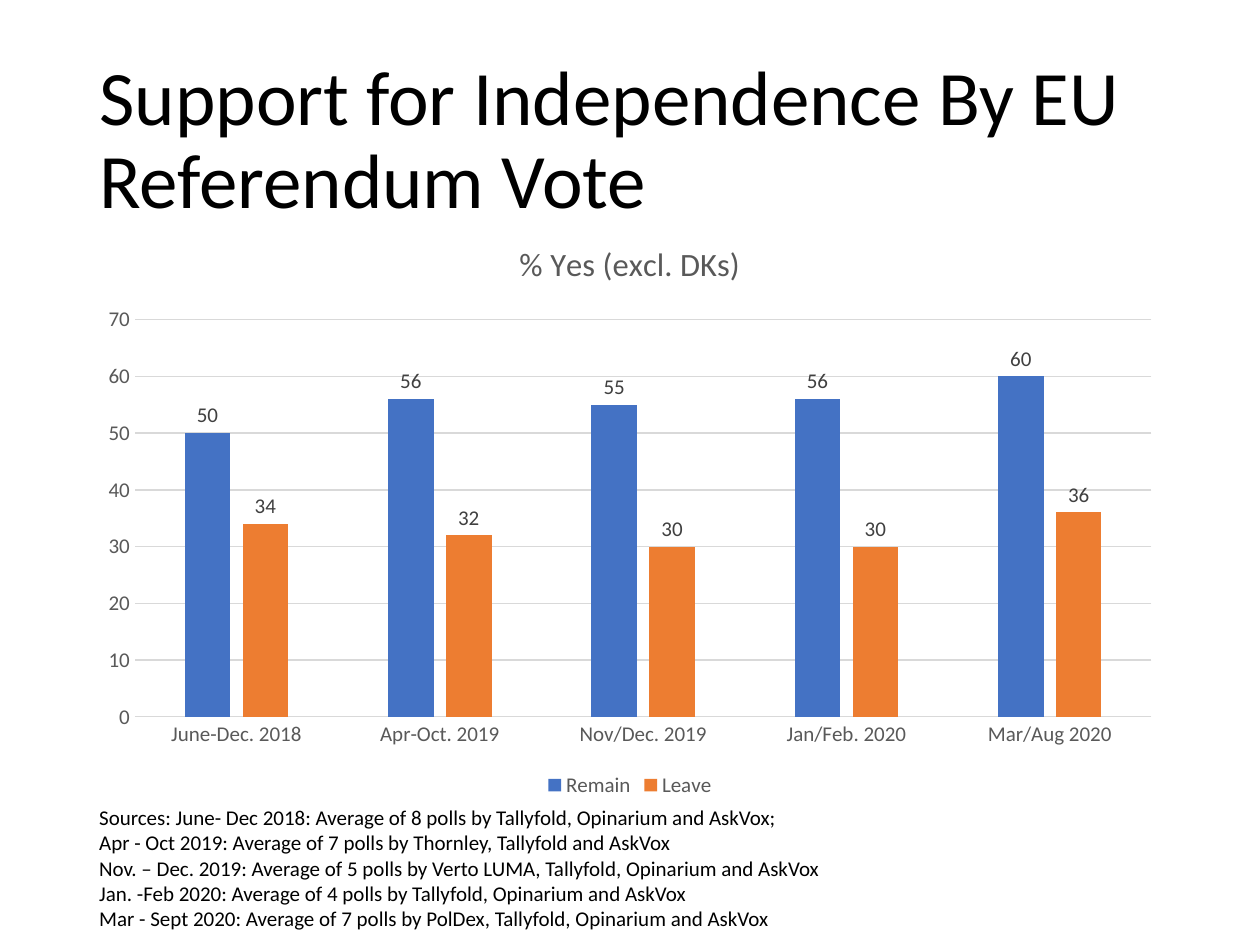
"""Build a slide charting support for independence by EU referendum vote."""
from dataclasses import dataclass

from pptx import Presentation
from pptx import util as u
from pptx.chart.data import CategoryChartData
from pptx.dml.color import RGBColor
from pptx.enum import chart as ch
from pptx.enum import text as tx

COLORS = {
    "text": "000000",
    "muted": "595959",
    "value": "404040",
    "grid": "D9D9D9",
    "remain": "4472C4",
    "leave": "ED7D31",
}
PERIODS = ["June-Dec. 2018", "Apr-Oct. 2019", "Nov/Dec. 2019", "Jan/Feb. 2020", "Mar/Aug 2020"]
SOURCES = [
    "Sources: June- Dec 2018: Average of 8 polls by Tallyfold, Opinarium and AskVox;",
    "Apr - Oct 2019: Average of 7 polls by Thornley, Tallyfold and AskVox",
    "Nov. – Dec. 2019: Average of 5 polls by Verto LUMA, Tallyfold, Opinarium and AskVox",
    "Jan. -Feb 2020: Average of 4 polls by Tallyfold, Opinarium and AskVox",
    "Mar - Sept 2020: Average of 7 polls by PolDex, Tallyfold, Opinarium and AskVox",
]


@dataclass(frozen=True)
class VoteGroup:
    name: str
    color: str
    yes_shares: tuple[int, ...]


@dataclass(frozen=True)
class Area:
    left: float
    top: float
    width: float
    height: float

    def lengths(self) -> list[u.Length]:
        return [u.Cm(n) for n in (self.left, self.top, self.width, self.height)]


VOTE_GROUPS = [
    VoteGroup("Remain", "remain", (50, 56, 55, 56, 60)),
    VoteGroup("Leave", "leave", (34, 32, 30, 30, 36)),
]
HEADING_AREA = Area(1.75, 1.02, 21.9, 3.68)
CHART_AREA = Area(1.75, 4.37, 21.9, 11.81)
SOURCES_AREA = Area(1.75, 16.1, 22.25, 2.82)


def rgb(color: str) -> RGBColor:
    return RGBColor.from_string(COLORS[color])


def set_all(target, values: dict) -> None:
    for attribute, value in values.items():
        setattr(target, attribute, value)


def style_font(font, size: float, color: str) -> None:
    set_all(font, {"name": "Calibri", "size": u.Pt(size), "bold": False})
    font.color.rgb = rgb(color)


def style_line(line) -> None:
    line.color.rgb = rgb("grid")
    line.width = u.Pt(0.75)


def add_heading(slide) -> None:
    heading = slide.shapes.title
    set_all(heading, dict(zip(("left", "top", "width", "height"), HEADING_AREA.lengths())))
    set_all(heading.text_frame, {
        "text": "Support for Independence By EU Referendum Vote",
        "auto_size": tx.MSO_AUTO_SIZE.NONE,
        "vertical_anchor": tx.MSO_ANCHOR.MIDDLE,
        "word_wrap": True,
    })
    line = heading.text_frame.paragraphs[0]
    set_all(line, {"alignment": tx.PP_ALIGN.LEFT, "line_spacing": 0.9})
    style_font(line.font, 44, "text")


def style_axes(chart) -> None:
    for axis in (chart.category_axis, chart.value_axis):
        set_all(axis, {
            "major_tick_mark": ch.XL_TICK_MARK.NONE,
            "minor_tick_mark": ch.XL_TICK_MARK.NONE,
        })
        style_font(axis.tick_labels.font, 12, "muted")
    style_line(chart.category_axis.format.line)
    shares = chart.value_axis
    set_all(shares, {"minimum_scale": 0, "maximum_scale": 70, "major_unit": 10})
    shares.format.line.fill.background()
    style_line(shares.major_gridlines.format.line)


def style_bars(chart) -> None:
    plot = chart.plots[0]
    set_all(plot, {"gap_width": 219, "overlap": -27, "vary_by_categories": False})
    for bars, group in zip(plot.series, VOTE_GROUPS):
        bars.format.fill.solid()
        bars.format.fill.fore_color.rgb = rgb(group.color)
        set_all(bars.data_labels, {
            "show_value": True,
            "position": ch.XL_LABEL_POSITION.OUTSIDE_END,
        })
        style_font(bars.data_labels.font, 12, "value")


def add_poll_chart(slide) -> None:
    polls = CategoryChartData()
    polls.categories = PERIODS
    for group in VOTE_GROUPS:
        polls.add_series(group.name, group.yes_shares)
    chart = slide.shapes.add_chart(
        ch.XL_CHART_TYPE.COLUMN_CLUSTERED, *CHART_AREA.lengths(), polls
    ).chart
    style_font(chart.font, 10, "text")
    set_all(chart, {"has_title": True, "has_legend": True})
    caption = chart.chart_title.text_frame
    caption.text = "% Yes (excl. DKs)"
    style_font(caption.paragraphs[0].font, 18.6, "muted")
    set_all(chart.legend, {
        "position": ch.XL_LEGEND_POSITION.BOTTOM,
        "include_in_layout": False,
    })
    style_font(chart.legend.font, 12, "muted")
    style_axes(chart)
    style_bars(chart)


def add_sources(slide) -> None:
    frame = slide.shapes.add_textbox(*SOURCES_AREA.lengths()).text_frame
    set_all(frame, {
        "text": "\n".join(SOURCES),
        "word_wrap": True,
        "auto_size": tx.MSO_AUTO_SIZE.SHAPE_TO_FIT_TEXT,
    })
    for source in frame.paragraphs:
        style_font(source.font, 12, "text")


def main() -> None:
    deck = Presentation()
    set_all(deck, {"slide_width": u.Cm(25.4), "slide_height": u.Cm(19.05)})
    slide = deck.slides.add_slide(deck.slide_layouts.get_by_name("Title Only"))
    add_heading(slide)
    add_poll_chart(slide)
    add_sources(slide)
    deck.save("out.pptx")


if __name__ == "__main__":
    main()
